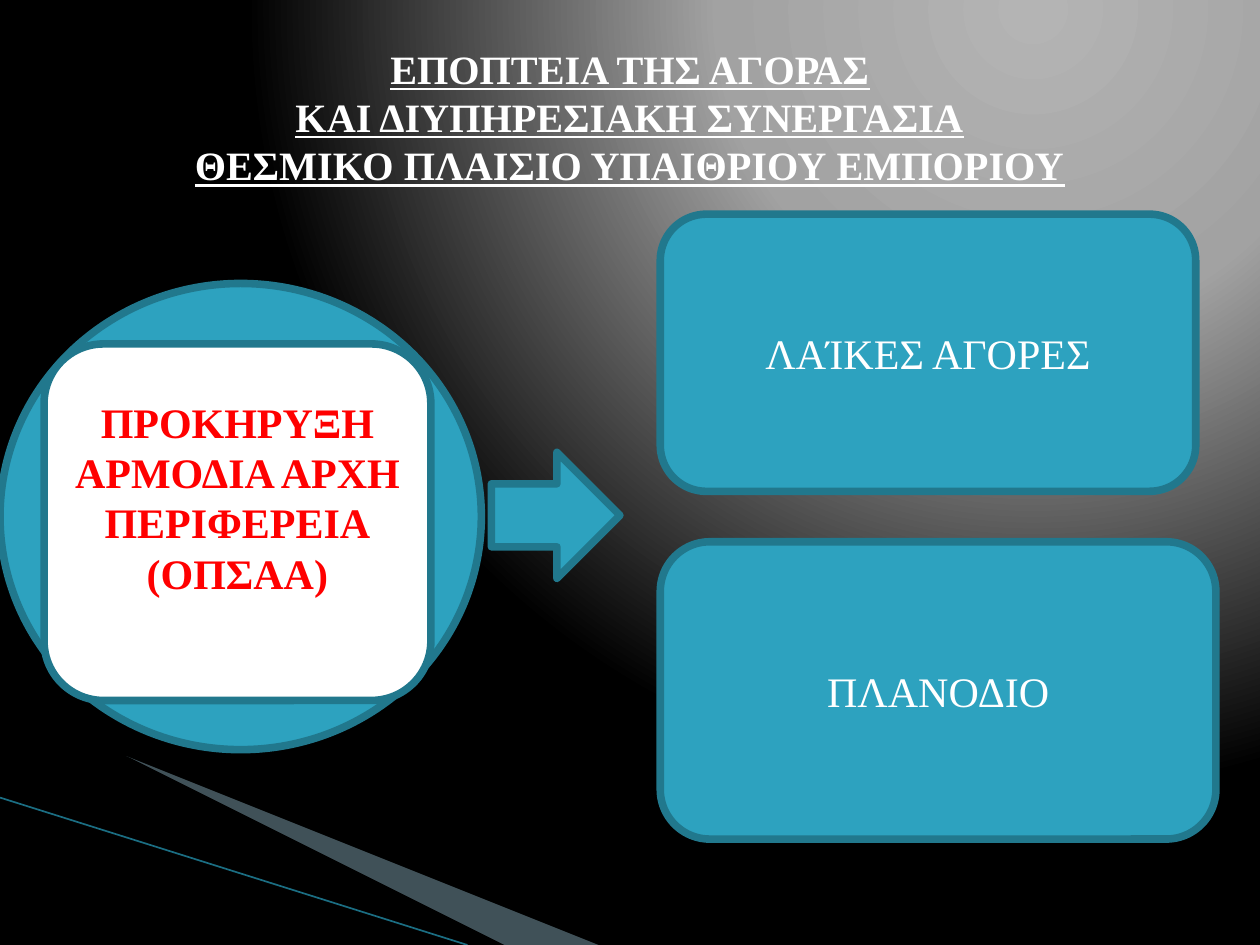
from dataclasses import dataclass
from typing import Optional

from lxml import etree
from pptx import Presentation
from pptx.dml.color import RGBColor
from pptx.enum.shapes import MSO_CONNECTOR, MSO_SHAPE
from pptx.enum.text import MSO_ANCHOR, PP_ALIGN
from pptx.oxml import parse_xml
from pptx.oxml.ns import nsdecls, qn
from pptx.util import Inches, Pt

ARROW = MSO_SHAPE.RIGHT_ARROW
ROUND = MSO_SHAPE.ROUNDED_RECTANGLE
OVAL = MSO_SHAPE.OVAL
STRAIGHT = MSO_CONNECTOR.STRAIGHT
MIDDLE = MSO_ANCHOR.MIDDLE
CENTER = PP_ALIGN.CENTER

TEAL = RGBColor(0x2D, 0xA2, 0xBF)
DARK_TEAL = RGBColor(0x21, 0x78, 0x8D)
PALE_BLUE = RGBColor(0xA0, 0xCB, 0xDC)
STRIPE = RGBColor(0x1B, 0x6E, 0x83)
WHITE = RGBColor(0xFF, 0xFF, 0xFF)
BLACK = RGBColor(0, 0, 0)
RED = RGBColor(0xFF, 0, 0)
FONT = "Times New Roman"

BACKGROUND = f"""<p:bg {nsdecls('p', 'a')}><p:bgPr><a:gradFill rotWithShape="1"><a:gsLst>
<a:gs pos="0"><a:srgbClr val="B4B4B4"/></a:gs>
<a:gs pos="40000"><a:srgbClr val="A2A2A2"/></a:gs>
<a:gs pos="100000"><a:srgbClr val="000000"/></a:gs></a:gsLst>
<a:path path="circle"><a:fillToRect l="65000" t="0" r="0" b="98000"/></a:path>
</a:gradFill><a:effectLst/></p:bgPr></p:bg>"""


@dataclass
class Block:
    kind: int
    left: float
    top: float
    width: float
    height: float
    text: str = ""
    fill: RGBColor = TEAL
    color: RGBColor = WHITE
    bold: Optional[bool] = None
    bottom_inset: float = 0.05


BLOCKS = [
    Block(ARROW, 3.9, 3.59, 1.02, 1),
    Block(ROUND, 5.24, 1.7, 4.25, 2.2, "ΛΑΊΚΕΣ ΑΓΟΡΕΣ"),
    Block(ROUND, 5.24, 4.3, 4.41, 2.36, "ΠΛΑΝΟΔΙΟ"),
    Block(OVAL, 0, 2.25, 3.82, 3.7),
    Block(ROUND, 0.35, 2.73, 3.07, 2.83,
          "ΠΡΟΚΗΡΥΞΗ ΑΡΜΟΔΙΑ ΑΡΧΗ\nΠΕΡΙΦΕΡΕΙΑ\n(ΟΠΣΑΑ)",
          WHITE, RED, True, 0.45),
]


def format_text(tf, size: float, color: RGBColor, bold: Optional[bool],
                underline: Optional[bool] = None) -> None:
    tf.word_wrap = True
    tf.vertical_anchor = MIDDLE
    for p in tf.paragraphs:
        p.alignment = CENTER
        for r in p.runs:
            r.font.name = FONT
            r.font.size = Pt(size)
            r.font.color.rgb = color
            r.font.bold = bold
            r.font.underline = underline


def add_wedge(s, points: list, color: RGBColor, opacity: int = 100) -> None:
    builder = s.shapes.build_freeform(*points[0], scale=Inches(1))
    builder.add_line_segments(points[1:], close=True)
    sp = builder.convert_to_shape()
    sp.shadow.inherit = False
    sp.fill.solid()
    sp.fill.fore_color.rgb = color
    sp.line.fill.background()
    if opacity < 100:
        clr = sp.fill._xPr.find(qn("a:solidFill"))[0]
        etree.SubElement(clr, qn("a:alpha"), val=str(opacity * 1000))


def add_block(s, block: Block) -> None:
    sp = s.shapes.add_shape(block.kind, Inches(block.left), Inches(block.top),
                            Inches(block.width), Inches(block.height))
    sp.shadow.inherit = False
    sp.fill.solid()
    sp.fill.fore_color.rgb = block.fill
    sp.line.color.rgb = DARK_TEAL
    sp.line.width = Pt(4.33)
    if block.text:
        tf = sp.text_frame
        tf.text = block.text
        tf.margin_left = tf.margin_right = Inches(0.05)
        tf.margin_bottom = Inches(block.bottom_inset)
        format_text(tf, 24, block.color, block.bold)


def main() -> None:
    prs = Presentation()
    prs.slide_width, prs.slide_height = Inches(10), Inches(7.5)
    s = prs.slides.add_slide(prs.slide_layouts[5])
    s.element.cSld.insert(0, parse_xml(BACKGROUND))

    # Corner decoration
    add_wedge(s, [(0.55, 6.5), (5.95, 7.5), (4.56, 7.5)], PALE_BLUE, 40)
    add_wedge(s, [(0.53, 6.49), (4.57, 7.5), (3.72, 7.5)], BLACK)
    stripe = s.shapes.add_connector(STRAIGHT, Inches(0), Inches(6.33),
                                    Inches(3.71), Inches(7.5))
    stripe.line.color.rgb = STRIPE
    stripe.line.width = Pt(0.95)
    etree.SubElement(stripe._element.spPr, qn("a:effectLst"))

    # Title
    title = s.shapes.title
    title.left, title.top = Inches(0.5), Inches(0.3)
    title.width, title.height = Inches(9), Inches(1.25)
    title.text_frame.text = ("ΕΠΟΠΤΕΙΑ ΤΗΣ ΑΓΟΡΑΣ\vΚΑΙ ΔΙΥΠΗΡΕΣΙΑΚΗ ΣΥΝΕΡΓΑΣΙΑ\v"
                             "ΘΕΣΜΙΚΟ ΠΛΑΙΣΙΟ ΥΠΑΙΘΡΙΟΥ ΕΜΠΟΡΙΟΥ")
    format_text(title.text_frame, 23, WHITE, True, True)

    # Authority, arrow and market types
    for block in BLOCKS:
        add_block(s, block)

    prs.save("out.pptx")


if __name__ == "__main__":
    main()
